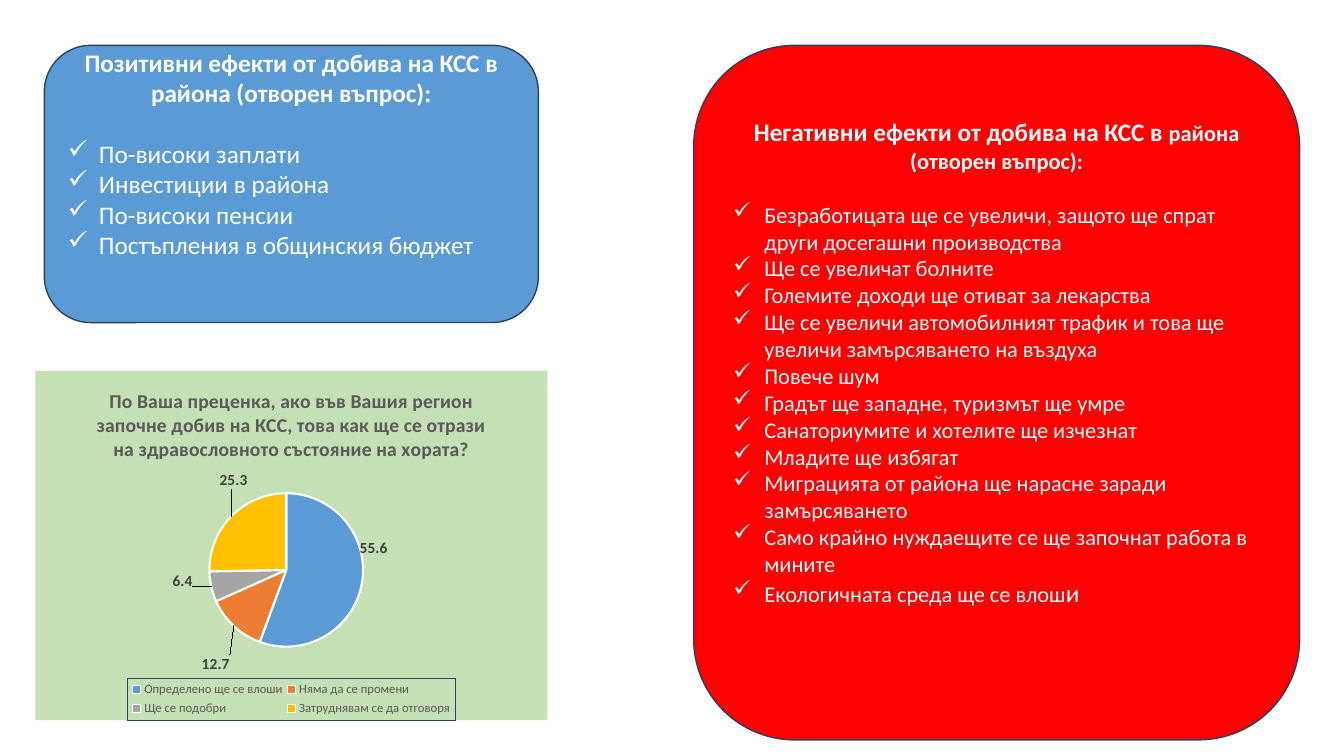
from pptx import Presentation
from pptx.chart.data import CategoryChartData
from pptx.dml.color import RGBColor
from pptx.enum.chart import XL_CHART_TYPE as ChartType, XL_LABEL_POSITION as LabelPosition
from pptx.enum.chart import XL_LEGEND_POSITION as LegendPosition
from pptx.enum.shapes import MSO_SHAPE as Shape
from pptx.enum.text import MSO_ANCHOR as Anchor, PP_ALIGN as Align
from pptx.oxml import parse_xml
from pptx.oxml.ns import nsdecls, qn
from pptx.util import Inches, Pt

COLORS = {
    "white": "FFFFFF", "outline": "28445D", "positive": "5B9BD5", "negative": "FF0000",
    "chart": "C5E0B4", "title": "595959", "label": "404040",
}
SLICES = [
    ("Определено ще се влоши", 55.6, "5B9BD5", (-0.016, -0.13)),
    ("Няма да се промени", 12.7, "ED7D31", (0, 0.07)),
    ("Ще се подобри", 6.4, "A5A5A5", (-0.025, -0.045)),
    ("Затруднявам се да отговоря", 25.3, "FFC000", (0.04, -0.065)),
]
CHART_TITLE = ("По Ваша преценка, ако във Вашия регион започне добив на КСС, "
               "това как ще се отрази на здравословното състояние на хората?")
POSITIVE_HEADING = [("Позитивни ефекти от добива на КСС в района (отворен въпрос):", 18)]
POSITIVE_EFFECTS = [
    [("По-високи заплати", 18)],
    [("Инвестиции в района", 18)],
    [("По-високи пенсии", 18)],
    [("Постъпления в общинския бюджет", 18)],
]
NEGATIVE_HEADING = [("Негативни ефекти от добива на КСС в ", 18), ("района (отворен въпрос):", 16)]
NEGATIVE_EFFECTS = [
    [("Безработицата ще се увеличи, защото ще спрат други досегашни производства", 16)],
    [("Ще се увеличат болните", 16)],
    [("Големите доходи ще отиват за лекарства", 16)],
    [("Ще се увеличи автомобилният трафик и това ще увеличи замърсяването на въздуха", 16)],
    [("Повече шум", 16)],
    [("Градът ще западне, туризмът ще умре", 16)],
    [("Санаториумите и хотелите ще изчезнат", 16)],
    [("Младите ще избягат", 16)],
    [("Миграцията от района ще нарасне заради замърсяването", 16)],
    [("Само крайно нуждаещите се ще започнат работа в мините", 16)],
    [("Екологичната среда ще се влош", 16), ("и", 18)],
]


class EffectsPage:
    font_name = "Calibri"

    def __init__(self, deck):
        self.page = deck.slides.add_slide(deck.slide_layouts[6])

    def color(self, name):
        return RGBColor.from_string(COLORS[name])

    def style(self, font, size, color, bold=False):
        font.name, font.size, font.bold = self.font_name, Pt(size), bold
        font.color.rgb = self.color(color)

    def paragraph(self, para, spans, bold):
        self.style(para.font, spans[0][1], "white", bold)
        for text, size in spans:
            span = para.add_run()
            span.text = text
            if size != spans[0][1]:
                span.font.size = Pt(size)

    def bullet(self, para):
        props = para._p.get_or_add_pPr()
        props.set("marL", str(Inches(0.31)))
        props.set("indent", str(Inches(-0.31)))
        mark = parse_xml(f'<a:buChar {nsdecls("a")} char="✓"/>')
        props.find(qn("a:defRPr")).addprevious(mark)

    def effects_box(self, place, fill, heading, effects, gap):
        box = self.page.shapes.add_shape(Shape.ROUNDED_RECTANGLE, *map(Inches, place))
        box.shadow.inherit = False
        box.fill.solid()
        box.fill.fore_color.rgb = self.color(fill)
        box.line.color.rgb = self.color("outline")
        box.line.width = Pt(1)
        frame = box.text_frame
        frame.word_wrap = True
        frame.vertical_anchor = Anchor.MIDDLE
        frame.margin_bottom = Inches(0.66)
        title = frame.paragraphs[0]
        title.alignment = Align.CENTER
        title.space_after = Pt(gap)
        self.paragraph(title, heading, True)
        for effect in effects:
            para = frame.add_paragraph()
            para.alignment = Align.LEFT
            self.paragraph(para, effect, False)
            self.bullet(para)

    def shape_props(self, fill=None, line=None):
        def paint(name):
            if not name:
                return "<a:noFill/>"
            return f'<a:solidFill><a:srgbClr val="{COLORS[name]}"/></a:solidFill>'
        return parse_xml(f'<c:spPr {nsdecls("c", "a")}>{paint(fill)}'
                         f'<a:ln w="9525">{paint(line)}</a:ln></c:spPr>')

    def layout(self, **settings):
        parts = "".join(f'<c:{key} val="{value}"/>' for key, value in settings.items())
        return parse_xml(f'<c:layout {nsdecls("c")}><c:manualLayout>{parts}'
                         '</c:manualLayout></c:layout>')

    def area(self, x, y, w, h):
        return dict(xMode="edge", yMode="edge", x=x, y=y, w=w, h=h)

    def pie(self, place):
        data = CategoryChartData()
        data.categories = [name for name, *_ in SLICES]
        data.add_series("Series 1", [value for _, value, *_ in SLICES])
        chart = self.page.shapes.add_chart(ChartType.PIE, *map(Inches, place), data).chart
        chart.font.name, chart.font.size = self.font_name, Pt(10)
        space = chart._chartSpace
        space.find(qn("c:chart")).addnext(self.shape_props(fill="chart"))

        chart.has_title = True
        title = chart.chart_title.text_frame.paragraphs[0]
        title.add_run().text = CHART_TITLE
        self.style(title.font, 14, "title", True)

        plot_area = next(space.iter(qn("c:plotArea")))
        for old in plot_area.findall(qn("c:layout")):
            plot_area.remove(old)
        plot_area.insert(0, self.layout(layoutTarget="inner", **self.area(0.34, 0.35, 0.3, 0.44)))
        self.legend(chart)
        self.slices(chart.plots[0])

    def legend(self, chart):
        chart.has_legend = True
        legend = chart.legend
        legend.position = LegendPosition.BOTTOM
        legend.include_in_layout = False
        self.style(legend.font, 9, "title")
        element = legend._element
        element.find(qn("c:overlay")).addprevious(self.layout(**self.area(0.18, 0.88, 0.64, 0.12)))
        element.find(qn("c:txPr")).addprevious(self.shape_props(line="outline"))

    def slices(self, plot):
        plot.vary_by_categories = True
        series = plot.series[0]
        labels = series.data_labels
        labels.show_value = True
        labels.position = LabelPosition.OUTSIDE_END
        self.style(labels.font, 11, "label", True)
        for index, (_, _, fill, _) in enumerate(SLICES):
            point = series.points[index]
            point.format.fill.solid()
            point.format.fill.fore_color.rgb = RGBColor.from_string(fill)
            point.format.line.color.rgb = self.color("white")
            point.format.line.width = Pt(1.5)
            self.style(point.data_label.font, 11, "label", True)
            point.data_label.position = LabelPosition.OUTSIDE_END
        for label, (*_, (x, y)) in zip(series._element.iter(qn("c:dLbl")), SLICES):
            label.find(qn("c:idx")).addnext(self.layout(x=x, y=y))


def main():
    deck = Presentation()
    deck.slide_width, deck.slide_height = Inches(13.33), Inches(7.5)
    page = EffectsPage(deck)
    page.pie((0.35, 3.68, 5.08, 3.47))
    page.effects_box((0.44, 0.45, 4.9, 2.75), "positive", POSITIVE_HEADING, POSITIVE_EFFECTS, 22)
    page.effects_box((6.88, 0.45, 6.01, 6.89), "negative", NEGATIVE_HEADING, NEGATIVE_EFFECTS, 19.5)
    deck.save("out.pptx")


if __name__ == "__main__":
    main()
